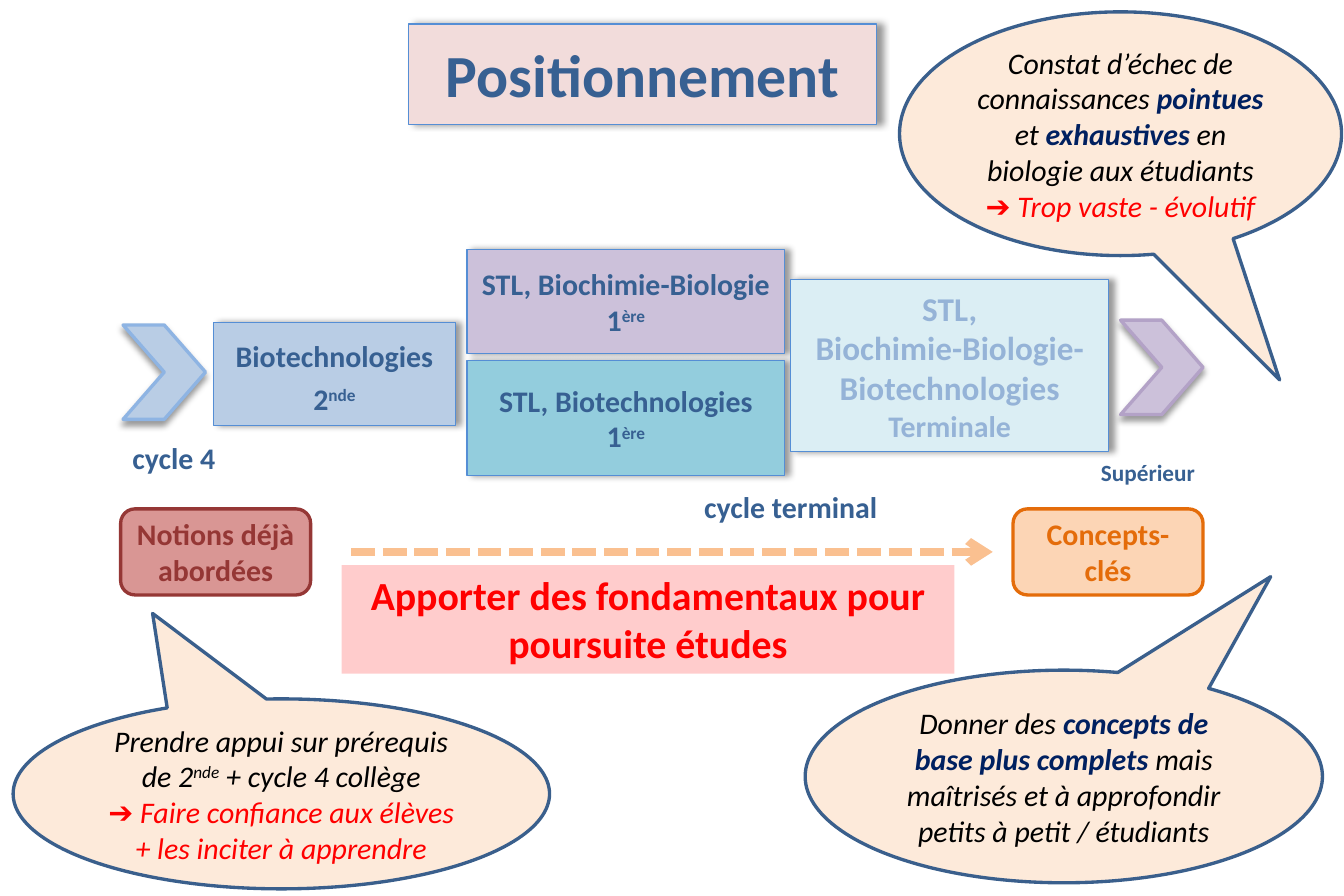
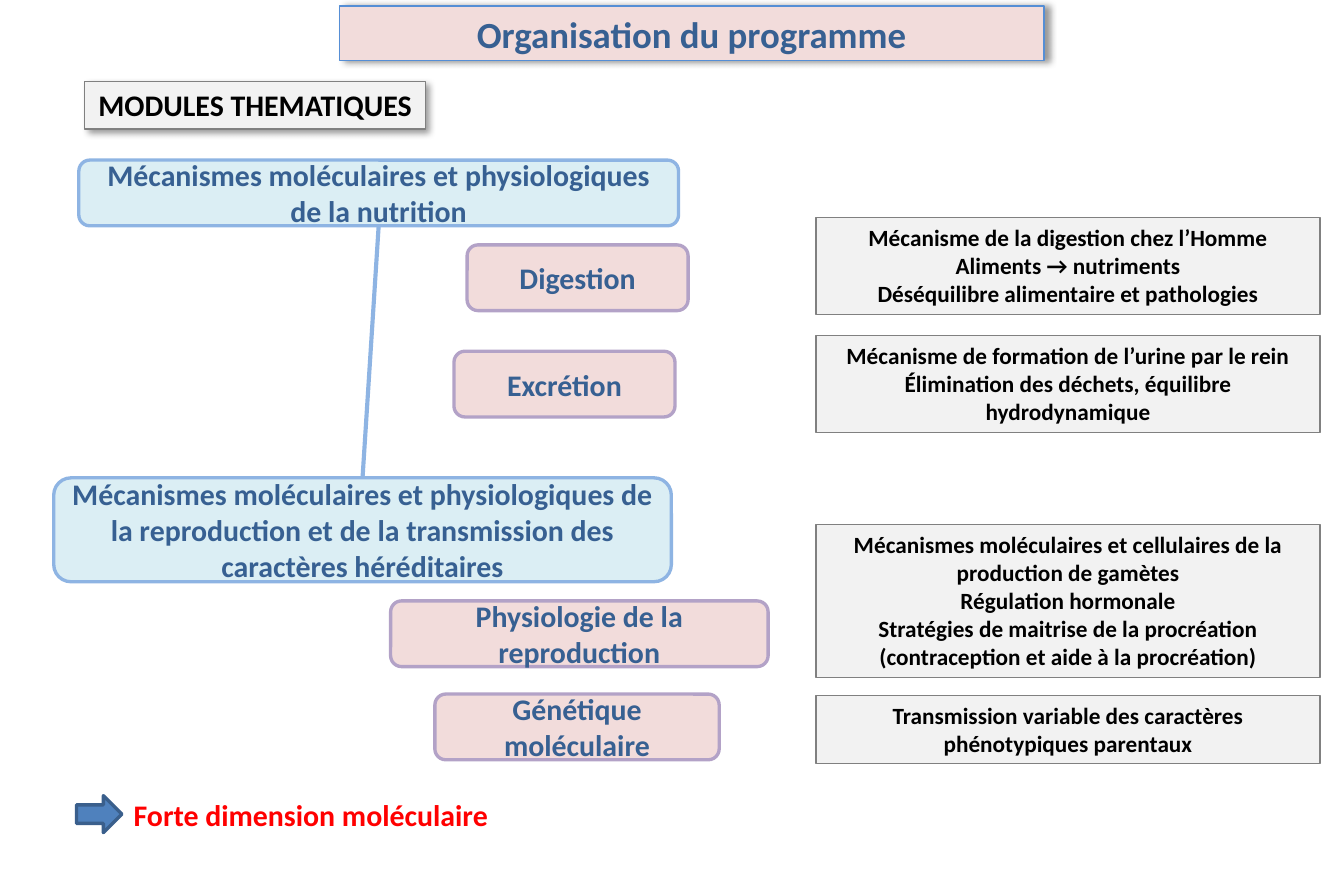
"""Build two slides on the positioning and organisation of a biology programme."""
from lxml import etree
from pptx import Presentation
from pptx import util as u
from pptx.dml.color import RGBColor
from pptx.enum import dml, shapes, text
from pptx.oxml.ns import qn

KIND = shapes.MSO_SHAPE
RECT, ROUND = KIND.RECTANGLE, KIND.ROUNDED_RECTANGLE
FONT = "Calibri"
COLOURS = {
    "black": "000000", "red": "FF0000", "navy": "002060", "ink": "376092", "faded": "95B3D7",
    "pink": "F2DCDB", "edge": "558ED5", "sky": "8EB4E3", "blue": "B9CDE5", "mauve": "CCC1DA",
    "violet": "B3A2C7", "teal": "93CDDD", "ice": "DBEEF4", "rose": "D99694", "wine": "953735",
    "peach": "FCD5B5", "orange": "E46C0A", "apricot": "FAC090", "cream": "FDEADA",
    "steel": "3A5F8C", "mist": "F2F2F2", "grey": "808080", "arrow": "4F81BD",
}
STEP = dict(line="edge", width=0.75, shadow=0)
TITLE = dict(STEP, fill="pink")
CHEVRON = dict(kind=KIND.CHEVRON, shadow=90)
CALLOUT = dict(kind=KIND.OVAL_CALLOUT, fill="cream", line="steel", colour="black",
               bold=False, italic=True)
MODULE = dict(kind=ROUND, fill="ice", line="sky")
TOPIC = dict(kind=ROUND, fill="pink", line="violet")
DETAIL = dict(fill="mist", line="grey", width=0.75, colour="black", size=14, anchor="TOP")
LABEL = dict(kind=None, anchor="TOP")

FIRST_YEAR = [("1", ""), ("ère", "sup")]
POSITIONING = [
    ((1.01, 4.26, 1.59, 0.72), ["Notions déjà abordées"],
     dict(kind=ROUND, fill="rose", line="wine", colour="wine")),
    ((8.48, 4.26, 1.59, 0.72), ["Concepts-clés"],
     dict(kind=ROUND, fill="peach", line="orange", colour="orange")),
    ((1.03, 2.72, 0.69, 0.79), [], dict(CHEVRON, fill="blue", line="sky")),
    ((1.79, 2.7, 2.02, 0.86), ["Biotechnologies", [("2", ""), ("nde", "sup")]],
     dict(STEP, fill="blue", spacing=1.2)),
    ((9.38, 2.68, 0.69, 0.79), [], dict(CHEVRON, fill="mauve", line="violet")),
    ((3.91, 2.09, 2.66, 0.87), ["STL, Biochimie-Biologie", FIRST_YEAR], dict(STEP, fill="mauve")),
    ((3.91, 3.02, 2.66, 0.96), ["STL, Biotechnologies", FIRST_YEAR], dict(STEP, fill="teal")),
    ((1.01, 3.63, 1.08, 0.4), ["cycle 4"], dict(LABEL, align="LEFT")),
    ((6.62, 2.34, 2.66, 1.44),
     ["STL,", "Biochimie-Biologie-Biotechnologies", [("Terminale", "small")]],
     dict(STEP, fill="ice", colour="faded", size=20)),
    ((9.08, 3.79, 1.06, 0.34), ["Supérieur"], dict(LABEL, size=14)),
    ((5.72, 4.04, 1.8, 0.4), ["cycle terminal"], LABEL),
    ((7.53, 0.1, 3.7, 2.04),
     [[("Constat d’échec de connaissances ", ""), ("pointues", "key"), (" et ", ""),
       ("exhaustives", "key"), (" en biologie aux étudiants", "")],
      [("➔ Trop vaste - évolutif", "alert")]],
     dict(CALLOUT, tip=(0.36, 1.01))),
    ((6.74, 5.61, 4.33, 1.78),
     [[("Donner des ", ""), ("concepts de base plus complets ", "key"),
       ("mais maîtrisés et à approfondir petits à petit / étudiants", "")]],
     dict(CALLOUT, tip=(0.4, -0.94))),
    ((0.11, 5.85, 4.49, 1.59),
     [[("Prendre appui sur prérequis de 2", ""), ("nde", "sup"), (" + cycle 4 collège", "")],
      [("➔ Faire confiance aux élèves + les inciter à apprendre", "alert")]],
     dict(CALLOUT, tip=(-0.24, -0.95))),
    ((2.86, 4.73, 5.13, 0.91), ["Apporter des fondamentaux pour poursuite études"],
     dict(fill="red", alpha=20, colour="red", size=24, anchor="TOP")),
]
MODULES = [
    ((0.66, 1.34, 5.02, 0.55), "Mécanismes moléculaires et physiologiques de la nutrition"),
    ((0.45, 4, 5.17, 0.87), "Mécanismes moléculaires et physiologiques de la reproduction "
     "et de la transmission des caractères héréditaires"),
]
TOPICS = [
    ("Digestion", (3.91, 2.05, 1.85), (1.82, 0.81),
     ["Mécanisme de la digestion chez l’Homme", "Aliments → nutriments",
      "Déséquilibre alimentaire et pathologies"]),
    ("Excrétion", (3.8, 2.94, 1.85), (2.81, 0.81),
     ["Mécanisme de formation de l’urine par le rein",
      "Élimination des déchets, équilibre hydrodynamique"]),
    ("Physiologie de la reproduction", (3.27, 5.03, 3.16), (4.39, 1.28),
     ["Mécanismes moléculaires et cellulaires de la production de gamètes",
      "Régulation hormonale",
      "Stratégies de maitrise de la procréation (contraception et aide à la procréation)"]),
    ("Génétique moléculaire", (3.64, 5.81, 2.38), (5.82, 0.57),
     ["Transmission variable des caractères phénotypiques parentaux"]),
]
TOPIC_HEIGHT, DETAIL_LEFT, DETAIL_WIDTH = 0.55, 6.83, 4.22


def rgb(name):
    """Return the named colour."""
    return RGBColor.from_string(COLOURS[name])


def add_shadow(shape, angle):
    """Give the shape a soft outer shadow in the given direction."""
    effects = shape._element.spPr.find(qn("a:effectLst"))
    outer = etree.SubElement(effects, qn("a:outerShdw"), blurRad=str(u.Pt(4)),
                             dist=str(u.Pt(3)), dir=str(angle * 60000), rotWithShape="0")
    black = etree.SubElement(outer, qn("a:srgbClr"), val=COLOURS["black"])
    etree.SubElement(black, qn("a:alpha"), val="40000")


def write(frame, paragraphs, colour, size, bold, italic, align, anchor, spacing, wrap):
    """Fill a text frame with plain or run-by-run paragraphs."""
    frame.word_wrap = wrap
    frame.auto_size = text.MSO_AUTO_SIZE.NONE
    frame.vertical_anchor = text.MSO_ANCHOR[anchor]
    for index, content in enumerate(paragraphs):
        paragraph = frame.add_paragraph() if index else frame.paragraphs[0]
        paragraph.alignment = text.PP_ALIGN[align]
        paragraph.line_spacing = spacing
        for words, role in [(content, "")] if isinstance(content, str) else content:
            run = paragraph.add_run()
            run.text = words
            font = run.font
            font.name, font.italic = FONT, italic
            font.size = u.Pt(18 if role == "small" else size)
            font.bold = bold or role == "key"
            font.color.rgb = rgb({"key": "navy", "alert": "red"}.get(role, colour))
            if role == "sup":
                run._r.get_or_add_rPr().set("baseline", "30000")


def dress(shape, paragraphs, fill=None, line=None, width=2, shadow=None, alpha=None, tip=(),
          colour="ink", size=18, bold=True, italic=False, align="CENTER", anchor="MIDDLE",
          spacing=1.0, wrap=True):
    """Apply fill, line, shadow and text to a shape."""
    if fill:
        shape.fill.solid()
        shape.fill.fore_color.rgb = rgb(fill)
    if alpha:
        tint = shape._element.spPr.find(qn("a:solidFill"))[0]
        etree.SubElement(tint, qn("a:alpha"), val=str(alpha * 1000))
    if line:
        shape.line.color.rgb = rgb(line)
        shape.line.width = u.Pt(width)
    else:
        shape.line.fill.background()
    shape.shadow.inherit = False
    if shadow is not None:
        add_shadow(shape, shadow)
    for index, value in enumerate(tip):
        shape.adjustments[index] = value
    write(shape.text_frame, paragraphs, colour, size, bold, italic, align, anchor, spacing, wrap)


def add_box(slide, place, paragraphs, kind=RECT, **style):
    """Add a preset shape, or a text box when there is no kind."""
    place = [u.Inches(length) for length in place]
    if kind is None:
        shape = slide.shapes.add_textbox(*place)
    else:
        shape = slide.shapes.add_shape(kind, *place)
    dress(shape, paragraphs, **style)
    return shape


def add_line(slide, start, end, colour, width):
    """Add a straight connector without shadow."""
    ends = [u.Inches(length) for length in (*start, *end)]
    link = slide.shapes.add_connector(shapes.MSO_CONNECTOR.STRAIGHT, *ends)
    link.line.color.rgb = rgb(colour)
    link.line.width = u.Pt(width)
    etree.SubElement(link._element.spPr, qn("a:effectLst"))
    return link


def add_slide(deck, title, place, size):
    """Add a slide with its framed title."""
    slide = deck.slides.add_slide(deck.slide_layouts[5])
    heading = slide.shapes.title
    heading.left, heading.top, heading.width, heading.height = map(u.Inches, place)
    dress(heading, [title], size=size, **TITLE)
    return slide


def build_positioning(deck):
    """Lay out the path from cycle 4 to higher education."""
    slide = add_slide(deck, "Positionnement", (3.42, 0.2, 3.92, 0.84), 36)
    progress = add_line(slide, (2.94, 4.62), (8.31, 4.62), "apricot", 4.75)
    progress.line.dash_style = dml.MSO_LINE.SQUARE_DOT
    etree.SubElement(progress.line._get_or_add_ln(), qn("a:tailEnd"), type="arrow")
    for place, paragraphs, style in POSITIONING:
        add_box(slide, place, paragraphs, **style)


def build_organisation(deck):
    """Lay out the modules, their topics and the details."""
    slide = add_slide(deck, "Organisation du programme", (2.84, 0.05, 5.9, 0.46), 22.2)
    add_box(slide, (0.71, 0.68, 2.85, 0.4), ["MODULES THEMATIQUES"], fill="mist", line="grey",
            width=0.75, shadow=45, colour="black", anchor="TOP", wrap=False)
    nutrition, reproduction = [add_box(slide, place, [name], **MODULE) for place, name in MODULES]
    link = add_line(slide, (0, 0), (1, 1), "sky", 2.5)
    link.begin_connect(nutrition, 2)
    link.end_connect(reproduction, 0)
    for topic, place, (top, height), details in TOPICS:
        add_box(slide, (*place, TOPIC_HEIGHT), [topic], **TOPIC)
        add_box(slide, (DETAIL_LEFT, top, DETAIL_WIDTH, height), details, **DETAIL)
    add_box(slide, (0.64, 6.66, 0.38, 0.31), [], kind=KIND.RIGHT_ARROW, fill="arrow", line="steel")
    add_box(slide, (1.02, 6.62, 6.08, 0.4), ["Forte dimension moléculaire"],
            **dict(LABEL, align="LEFT", colour="red"))


def main():
    """Build and save the deck."""
    deck = Presentation()
    deck.slide_width, deck.slide_height = u.Inches(11.25), u.Inches(7.5)
    build_positioning(deck)
    build_organisation(deck)
    deck.save("out.pptx")


if __name__ == "__main__":
    main()
